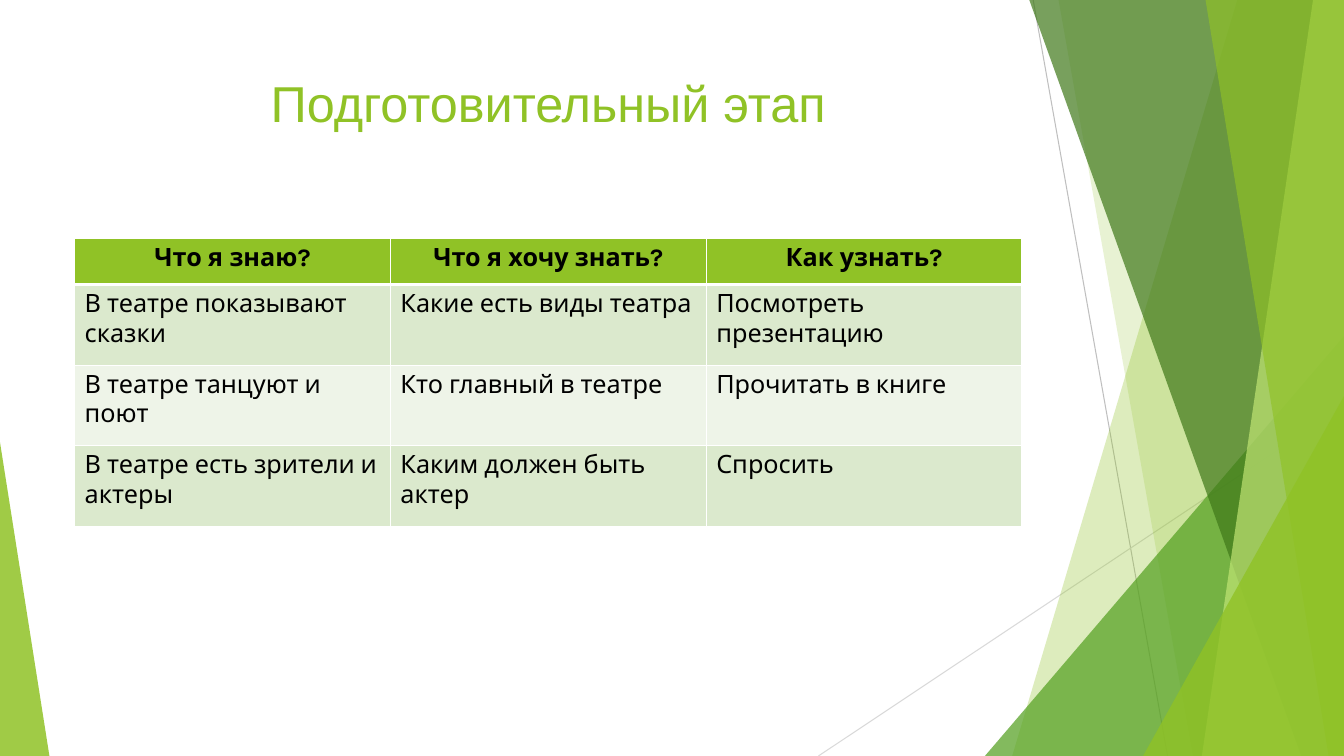
from lxml import etree
from pptx import Presentation
from pptx.dml.color import RGBColor
from pptx.enum import shapes as kinds, text
from pptx.oxml.ns import qn
from pptx.util import Pt

WIDE, HIGH, RISE = 960, 540, -0.7
GREEN = "90C226"
ROWS = [
    ["Что я знаю?", "Что я хочу знать?", "Как узнать?"],
    ["В театре показывают сказки", "Какие есть виды театра", "Посмотреть презентацию"],
    ["В театре танцуют и поют", "Кто главный в театре", "Прочитать в книге"],
    ["В театре есть зрители и актеры", "Каким должен быть актер", "Спросить"],
]
FILLS = [GREEN, "DBE9CD", "EEF4E8", "DBE9CD"]


def paint(fill, color, alpha=100):
    """Fill with a colour at an opacity in percent."""
    fill.solid()
    fill.fore_color.rgb = RGBColor.from_string(color)
    if alpha < 100:
        tone = fill._xPr.find(".//" + qn("a:srgbClr"))
        etree.SubElement(tone, qn("a:alpha"), val=str(alpha * 1000))


def finish(shape, color, alpha):
    paint(shape.fill, color, alpha)
    shape.line.fill.background()
    shape.shadow.inherit = False


def add_line(slide, start, end, color):
    line = slide.shapes.add_connector(
        kinds.MSO_CONNECTOR.STRAIGHT, *map(Pt, start + end))
    paint(line.line.fill, color)
    line.line.width = Pt(0.75)
    etree.SubElement(line._element.spPr, qn("a:effectLst"))


def add_band(slide, top, base, color, alpha):
    """Band from x = top and x = base to the right edge of the slide."""
    pen = slide.shapes.build_freeform(Pt(top), Pt(RISE))
    pen.add_line_segments(
        [(Pt(x), Pt(y)) for x, y in [(WIDE, RISE), (WIDE, HIGH), (base, HIGH)]])
    finish(pen.convert_to_shape(), color, alpha)


def add_wedge(slide, left, top, width, peak, color, alpha):
    """Triangle on the bottom edge; peak is 0 at left and 1 at right."""
    wedge = slide.shapes.add_shape(
        kinds.MSO_SHAPE.ISOSCELES_TRIANGLE,
        Pt(left), Pt(top), Pt(width), Pt(HIGH - top))
    wedge.adjustments[0] = peak
    finish(wedge, color, alpha)


def add_title(slide, words):
    box = slide.shapes.add_textbox(Pt(53.3), Pt(48), Pt(676.8), Pt(104))
    box.text_frame.word_wrap = True
    para = box.text_frame.paragraphs[0]
    para.text = words
    para.alignment = text.PP_ALIGN.CENTER
    style(para.font, "Arial", 36, GREEN)


def style(font, name, size, color, bold=False):
    font.name, font.size, font.bold = name, Pt(size), bold
    font.color.rgb = RGBColor.from_string(color)


def add_edge(cell, side, width):
    edge = etree.SubElement(
        cell._tc.get_or_add_tcPr(), qn("a:ln" + side), w=str(Pt(width)))
    solid = etree.SubElement(edge, qn("a:solidFill"))
    etree.SubElement(solid, qn("a:srgbClr"), val="FFFFFF")


def add_grid(slide):
    table = slide.shapes.add_table(
        len(ROWS), len(ROWS[0]), Pt(53.3), Pt(170.2), Pt(676.8), Pt(206)).table
    for col in table.columns:
        col.width = Pt(225.6)
    for i, words in enumerate(ROWS):
        head = i == 0
        table.rows[i].height = Pt(33 if head else 57.6)
        for j, word in enumerate(words):
            cell = table.cell(i, j)
            for side in "LRTB":
                thick = (i, side) in [(0, "B"), (1, "T")]
                add_edge(cell, side, 3 if thick else 1)
            paint(cell.fill, FILLS[i])
            para = cell.text_frame.paragraphs[0]
            para.text = word
            if head:
                para.alignment = text.PP_ALIGN.CENTER
            style(para.font, "Karla", 18, "000000", head)


def main():
    deck = Presentation()
    deck.slide_width, deck.slide_height = Pt(WIDE), Pt(HIGH)
    slide = deck.slides.add_slide(deck.slide_layouts[6])
    add_line(slide, (738, 0), (834, HIGH), "BFBFBF")
    add_line(slide, (WIDE, 290), (584.6, HIGH), "D9D9D9")
    add_band(slide, 884, 723, GREEN, 30)
    add_band(slide, 756, 852, GREEN, 20)
    add_wedge(slide, 703.5, 240, 256.5, 1, "54A021", 72)
    add_band(slide, 735, 929.5, "3F7819", 70)
    add_band(slide, 938, 858.5, "C0E474", 70)
    add_band(slide, 861, 949, GREEN, 65)
    add_wedge(slide, 816.5, 283, 143.5, 1, GREEN, 80)
    add_wedge(slide, 0, 316, 35.3, 0, GREEN, 85)
    add_title(slide, "Подготовительный этап")
    add_grid(slide)
    deck.save("out.pptx")


if __name__ == "__main__":
    main()
